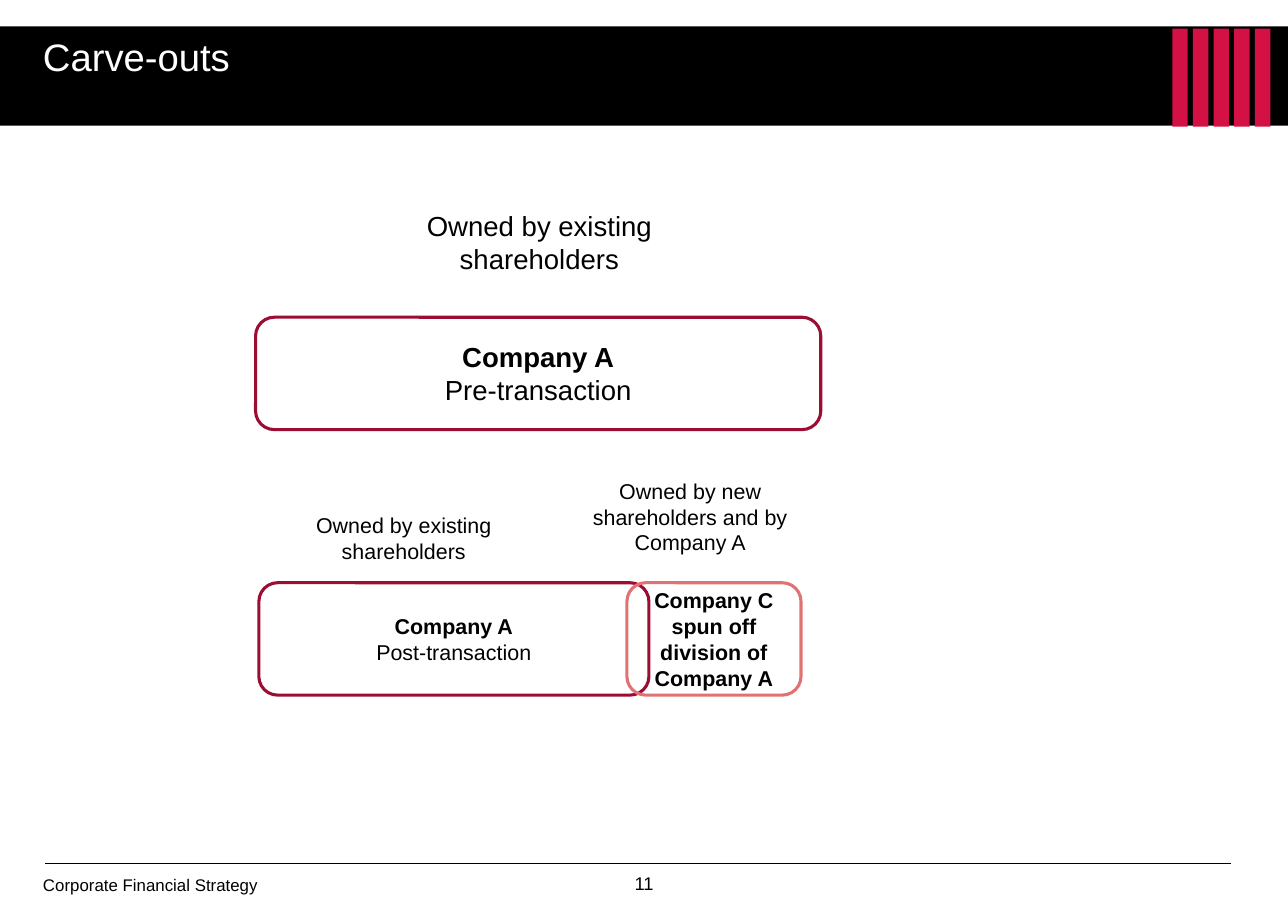
from dataclasses import dataclass

import pptx
import pptx.dml.color
import pptx.enum.shapes
import pptx.enum.text
import pptx.oxml
import pptx.oxml.ns
import pptx.slide
import pptx.util

Inches = pptx.util.Inches
Pt = pptx.util.Pt
RGBColor = pptx.dml.color.RGBColor
MSO_SHAPE = pptx.enum.shapes.MSO_SHAPE
MSO_ANCHOR = pptx.enum.text.MSO_ANCHOR
PP_ALIGN = pptx.enum.text.PP_ALIGN

BLACK = RGBColor(0x00, 0x00, 0x00)
WHITE = RGBColor(0xFF, 0xFF, 0xFF)
STRIPE_RED = RGBColor(0xD3, 0x11, 0x45)
DARK_RED = RGBColor(0x9C, 0x0D, 0x33)
LIGHT_RED = RGBColor(0xE1, 0x72, 0x73)

FONT = "Arial"
SLIDE_W, SLIDE_H = 11.69, 8.27


@dataclass
class Line:
    text: str
    bold: bool = False


@dataclass
class Label:
    left: float
    top: float
    width: float
    height: float
    text: str
    size: float
    align: PP_ALIGN = PP_ALIGN.CENTER
    color: RGBColor = BLACK
    inset: bool = True


@dataclass
class Company:
    left: float
    top: float
    width: float
    outline: RGBColor
    size: float
    lines: list[Line]


LABELS = [
    Label(0.39, 0.3, 9.78, 0.65, "Carve-outs", 25, PP_ALIGN.LEFT, WHITE, inset=False),
    Label(0.39, 7.94, 2.35, 0.23, "Corporate Financial Strategy", 11, PP_ALIGN.LEFT, inset=False),
    Label(3.69, 7.87, 2.34, 0.3, "11", 12, PP_ALIGN.RIGHT),
    Label(3.52, 1.85, 2.75, 0.71, "Owned by existing shareholders", 18),
    Label(2.29, 4.6, 2.75, 0.57, "Owned by existing shareholders", 14),
    Label(5.08, 4.29, 2.37, 0.81, "Owned by new shareholders and by Company A", 14),
]

COMPANY_H = 1.02
COMPANIES = [
    Company(2.32, 2.88, 5.13, DARK_RED, 18,
            [Line("Company A", bold=True), Line("Pre-transaction")]),
    Company(2.35, 5.29, 3.54, DARK_RED, 14,
            [Line("Company A", bold=True), Line("Post-transaction")]),
    Company(5.69, 5.29, 1.58, LIGHT_RED, 14,
            [Line("Company C", bold=True),
             Line("spun off division of Company A", bold=True)]),
]


def write_lines(tf: pptx.text.text.TextFrame, lines: list[Line], size: float,
                color: RGBColor, align: PP_ALIGN) -> None:
    tf.word_wrap = True
    for i, line in enumerate(lines):
        p = tf.add_paragraph() if i else tf.paragraphs[0]
        p.text = line.text
        p.alignment = align
        p.font.name = FONT
        p.font.size = Pt(size)
        p.font.bold = line.bold
        p.font.color.rgb = color


def add_bar(slide: pptx.slide.Slide, left: float, top: float,
            width: float, height: float, fill: RGBColor) -> None:
    sp = slide.shapes.add_shape(MSO_SHAPE.RECTANGLE, Inches(left), Inches(top),
                                Inches(width), Inches(height))
    sp.shadow.inherit = False
    sp.fill.solid()
    sp.fill.fore_color.rgb = fill
    sp.line.fill.background()


def add_label(slide: pptx.slide.Slide, label: Label) -> None:
    sp = slide.shapes.add_textbox(Inches(label.left), Inches(label.top),
                                  Inches(label.width), Inches(label.height))
    tf = sp.text_frame
    if not label.inset:
        tf.margin_left = tf.margin_top = tf.margin_right = tf.margin_bottom = 0
    write_lines(tf, [Line(label.text)], label.size, label.color, label.align)


def add_company(slide: pptx.slide.Slide, company: Company) -> None:
    sp = slide.shapes.add_shape(MSO_SHAPE.ROUNDED_RECTANGLE,
                                Inches(company.left), Inches(company.top),
                                Inches(company.width), Inches(COMPANY_H))
    sp.shadow.inherit = False
    sp.fill.background()
    sp.line.color.rgb = company.outline
    sp.line.width = Pt(2)
    sp.text_frame.vertical_anchor = MSO_ANCHOR.MIDDLE
    write_lines(sp.text_frame, company.lines, company.size, BLACK, PP_ALIGN.CENTER)


def add_rule(slide: pptx.slide.Slide, left: float, right: float, y: float) -> None:
    rule = slide.shapes.add_connector(pptx.enum.shapes.MSO_CONNECTOR.STRAIGHT,
                                      Inches(left), Inches(y), Inches(right), Inches(y))
    rule.line.color.rgb = BLACK
    rule.line.width = Pt(0.5)
    sp_pr = rule._element.spPr
    sp_pr.append(pptx.oxml.parse_xml(
        f"<a:effectLst {pptx.oxml.ns.nsdecls('a')}/>"))


def main() -> None:
    prs = pptx.Presentation()
    prs.slide_width, prs.slide_height = Inches(SLIDE_W), Inches(SLIDE_H)
    slide = prs.slides.add_slide(prs.slide_layouts[6])

    # Header band with five stripes
    add_bar(slide, 0, 0.24, SLIDE_W, 0.9, BLACK)
    for i in range(5):
        add_bar(slide, 10.64 + i * 0.1875, 0.26, 0.14, 0.89, STRIPE_RED)

    # Footer rule
    add_rule(slide, 0.41, 11.17, 7.84)

    # Companies before and after the transaction
    for company in COMPANIES:
        add_company(slide, company)

    # Title, footer and ownership labels
    for label in LABELS:
        add_label(slide, label)

    prs.save("out.pptx")


if __name__ == "__main__":
    main()
